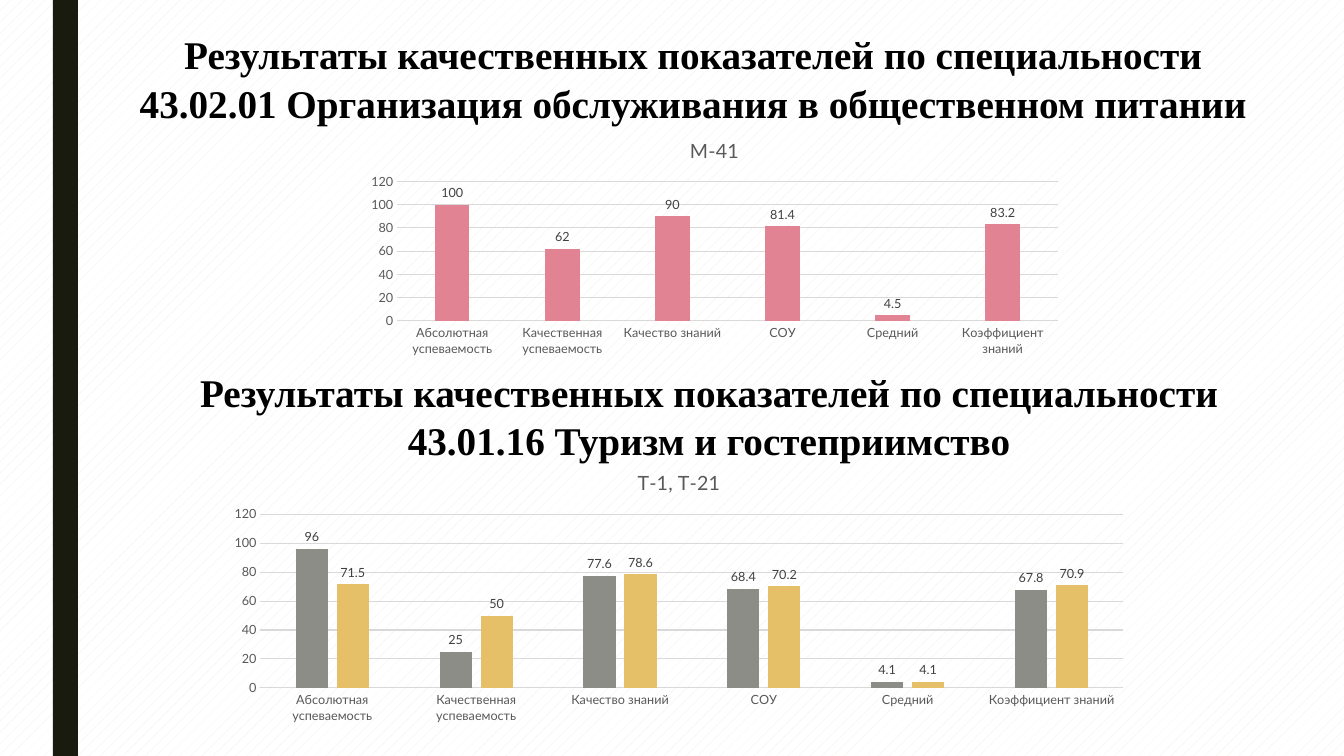
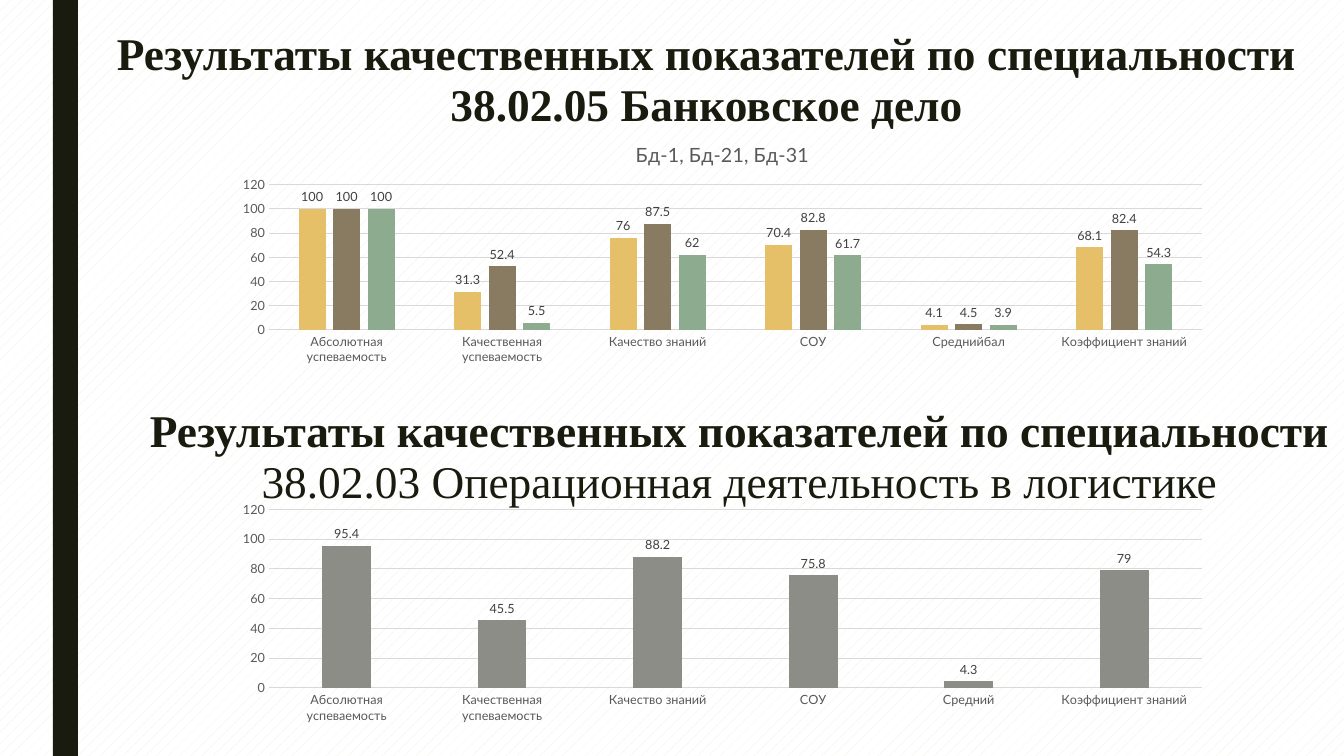
from dataclasses import dataclass

from pptx import Presentation
from pptx.chart.data import CategoryChartData
from pptx.dml.color import RGBColor
from pptx.enum.chart import XL_CHART_TYPE, XL_LABEL_POSITION, XL_TICK_MARK
from pptx.enum.dml import MSO_PATTERN
from pptx.enum.shapes import MSO_SHAPE
from pptx.enum.text import MSO_ANCHOR, MSO_AUTO_SIZE, PP_ALIGN
from pptx.util import Inches, Pt

PAGE_WIDTH, PAGE_HEIGHT = 1344, 756
PX_PER_INCH = 100.8
TITLE_ONLY = 5


@dataclass(frozen=True)
class HeadingStyle:
    size: float
    color: str
    spacing: float


@dataclass(frozen=True)
class Theme:
    heading_font: str = "Times New Roman"
    chart_font: str = "Lato"
    compact: HeadingStyle = HeadingStyle(28, "000000", 1.04)
    large: HeadingStyle = HeadingStyle(32.4, "191B0E", 0.93)
    band: str = "191B0E"
    paper: str = "FFFFFF"
    hatch: str = "EFEDE3"
    grid: str = "D9D9D9"
    axis_text: str = "595959"
    label_text: str = "404040"
    rose: str = "E28394"
    gray: str = "8C8D86"
    gold: str = "E6C069"
    brown: str = "897B61"
    green: str = "8DAB8E"
    chart_title_size: int = 14
    chart_size: int = 10
    tick_size: int = 9
    grid_width: float = 0.75


THEME = Theme()
HEADING_START = "Результаты качественных показателей по специальности"


def px(length):
    return round(Inches(1) * length / PX_PER_INCH)


def rgb(color):
    return RGBColor.from_string(color)


def indicators(average="Средний"):
    return ("Абсолютная успеваемость", "Качественная успеваемость",
            "Качество знаний", "СОУ", average, "Коэффициент знаний")


class Report:
    def __init__(self, theme):
        self.theme = theme
        self.deck = Presentation()
        self.deck.slide_width = px(PAGE_WIDTH)
        self.deck.slide_height = px(PAGE_HEIGHT)
        fill = self.deck.slide_master.background.fill
        fill.patterned()
        fill.pattern = MSO_PATTERN.PERCENT_10
        fill.fore_color.rgb = rgb(theme.hatch)
        fill.back_color.rgb = rgb(theme.paper)
        self.page = None

    def new_page(self):
        self.page = self.deck.slides.add_slide(self.deck.slide_layouts[TITLE_ONLY])
        band = self.page.shapes.add_shape(
            MSO_SHAPE.RECTANGLE, px(53), 0, px(25), px(PAGE_HEIGHT))
        band.shadow.inherit = False
        band.fill.solid()
        band.fill.fore_color.rgb = rgb(self.theme.band)
        band.line.fill.background()

    def title(self, second_line, place, style, **options):
        box = self.page.shapes.title
        box.left, box.top, box.width, box.height = map(px, place)
        self.write_heading(box, second_line, style, **options)

    def heading(self, second_line, place, style, **options):
        box = self.page.shapes.add_textbox(*map(px, place))
        self.write_heading(box, second_line, style, **options)

    def write_heading(self, box, second_line, style, second_bold=True):
        frame = box.text_frame
        frame.word_wrap = True
        frame.auto_size = MSO_AUTO_SIZE.NONE
        frame.vertical_anchor = MSO_ANCHOR.TOP
        frame.text = f"{HEADING_START}\n{second_line}"
        for para, bold in zip(frame.paragraphs, (True, second_bold)):
            para.alignment = PP_ALIGN.CENTER
            para.line_spacing = style.spacing
            self.set_font(para.font, self.theme.heading_font, style.size, style.color)
            para.font.bold = bold

    def set_font(self, font, name, size, color):
        font.name = name
        font.size = Pt(size)
        font.color.rgb = rgb(color)

    def set_chart_font(self, font, size, color):
        self.set_font(font, self.theme.chart_font, size, color)

    def set_line(self, line):
        line.color.rgb = rgb(self.theme.grid)
        line.width = Pt(self.theme.grid_width)

    def chart(self, place, categories, groups, title=None):
        """Draw columns; groups holds (name, color, values) for each series."""
        data = CategoryChartData()
        data.categories = categories
        for name, _, values in groups:
            data.add_series(name, values)
        chart = self.page.shapes.add_chart(
            XL_CHART_TYPE.COLUMN_CLUSTERED, *map(px, place), data).chart
        self.set_chart_font(chart.font, self.theme.chart_size, "000000")
        chart.has_legend = False
        chart.has_title = title is not None
        if title:
            chart.chart_title.include_in_layout = False
            frame = chart.chart_title.text_frame
            frame.text = title
            font = frame.paragraphs[0].font
            self.set_chart_font(font, self.theme.chart_title_size, self.theme.axis_text)
            font.bold = False
        self.format_axes(chart)
        self.format_columns(chart.plots[0], [color for _, color, _ in groups])

    def format_axes(self, chart):
        for axis in (chart.category_axis, chart.value_axis):
            axis.major_tick_mark = axis.minor_tick_mark = XL_TICK_MARK.NONE
            self.set_chart_font(axis.tick_labels.font, self.theme.tick_size,
                                self.theme.axis_text)
        self.set_line(chart.category_axis.format.line)
        scale = chart.value_axis
        scale.minimum_scale, scale.maximum_scale, scale.major_unit = 0, 120, 20
        scale.format.line.fill.background()
        scale.has_major_gridlines = True
        self.set_line(scale.major_gridlines.format.line)

    def format_columns(self, plot, colors):
        plot.vary_by_categories = False
        plot.gap_width = 219
        plot.overlap = -27
        for series, color in zip(plot.series, colors):
            series.format.fill.solid()
            series.format.fill.fore_color.rgb = rgb(color)
            labels = series.data_labels
            labels.show_value = True
            labels.position = XL_LABEL_POSITION.OUTSIDE_END
            self.set_chart_font(labels.font, self.theme.tick_size, self.theme.label_text)


def add_catering_and_tourism(report):
    theme = report.theme
    report.new_page()
    report.title("43.02.01 Организация обслуживания в общественном питании",
                 (55, 23, 1276, 105), theme.compact)
    report.heading("43.01.16 Туризм и гостеприимство",
                   (99, 361, 1220, 105), theme.compact)
    report.chart((357, 123, 715, 238), indicators(), [
        ("М-41", theme.rose, (100, 62, 90, 81.4, 4.5, 83.2)),
    ], title="М-41")
    report.chart((216, 454, 926, 275), indicators(), [
        ("Т-1", theme.gray, (96, 25, 77.6, 68.4, 4.1, 67.8)),
        ("Т-21", theme.gold, (71.5, 50, 78.6, 70.2, 4.1, 70.9)),
    ], title="Т-1, Т-21")


def add_banking_and_logistics(report):
    theme = report.theme
    report.new_page()
    report.title("38.02.03 Операционная деятельность в логистике",
                 (135, 402, 1209, 118), theme.large, second_bold=False)
    report.chart((223, 126, 999, 244), indicators("Среднийбал"), [
        ("Бд-1", theme.gold, (100, 31.3, 76, 70.4, 4.1, 68.1)),
        ("Бд-21", theme.brown, (100, 52.4, 87.5, 82.8, 4.5, 82.4)),
        ("Бд-31", theme.green, (100, 5.5, 62, 61.7, 3.9, 54.3)),
    ], title="Бд-1, Бд-21, Бд-31")
    report.heading("38.02.05 Банковское дело", (102, 25, 1209, 118), theme.large)
    report.chart((223, 497, 999, 231), indicators(), [
        ("Показатели", theme.gray, (95.4, 45.5, 88.2, 75.8, 4.3, 79)),
    ])


def main():
    report = Report(THEME)
    add_catering_and_tourism(report)
    add_banking_and_logistics(report)
    report.deck.save("out.pptx")


if __name__ == "__main__":
    main()
